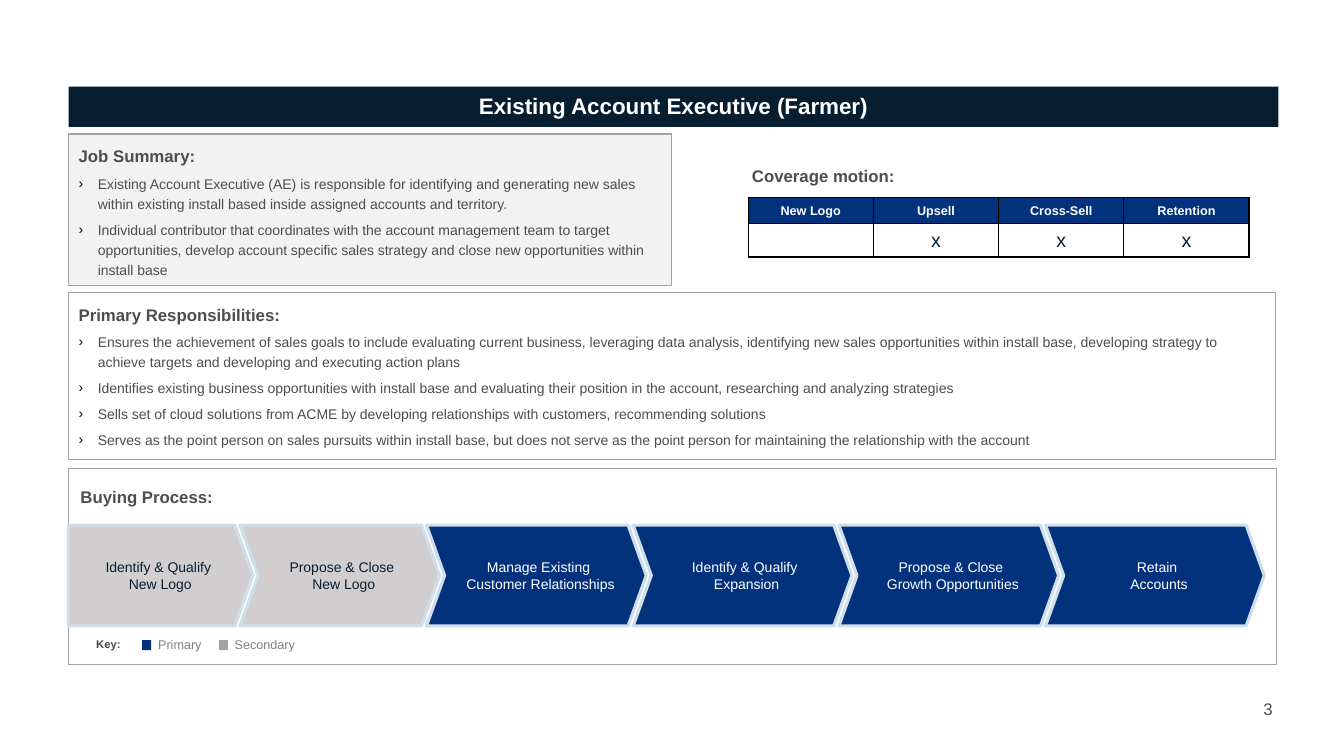
from pptx import Presentation
from pptx.dml.color import RGBColor
from pptx.enum.shapes import MSO_SHAPE as Preset
from pptx.enum.text import MSO_ANCHOR as Anchor, MSO_AUTO_SIZE as AutoSize, PP_ALIGN as Align
from pptx.oxml import parse_xml
from pptx.oxml.ns import nsdecls
from pptx.util import Inches, Pt

NAVY = RGBColor(0x07, 0x1E, 0x31)
BLUE = RGBColor(0x03, 0x32, 0x7C)
PALE_BLUE = RGBColor(0xCE, 0xDF, 0xEB)
SILVER = RGBColor(0xD0, 0xCE, 0xCE)
GRAY = RGBColor(0x9F, 0xA4, 0x9F)
LIGHT = RGBColor(0xF2, 0xF2, 0xF2)
TEXT = RGBColor(0x4D, 0x4D, 0x4D)
KEY_TEXT = RGBColor(0x7F, 0x7F, 0x7F)
KEY_TITLE = RGBColor(0x4C, 0x48, 0x46)
WHITE = RGBColor(0xFF, 0xFF, 0xFF)

JOB_SUMMARY = [
    "Existing Account Executive (AE) is responsible for identifying and generating new sales "
    "within existing install based inside assigned accounts and territory.",
    "Individual contributor that coordinates with the account management team to target "
    "opportunities, develop account specific sales strategy and close new opportunities "
    "within install base",
]
RESPONSIBILITIES = [
    "Ensures the achievement of sales goals to include evaluating current business, leveraging "
    "data analysis, identifying new sales opportunities within install base, developing "
    "strategy to achieve targets and developing and executing action plans",
    "Identifies existing business opportunities with install base and evaluating their "
    "position in the account, researching and analyzing strategies",
    "Sells set of cloud solutions from ACME by developing relationships with customers, "
    "recommending solutions",
    "Serves as the point person on sales pursuits within install base, but does not serve as "
    "the point person for maintaining the relationship with the account",
]
COVERAGE = {"New Logo": "", "Upsell": "x", "Cross-Sell": "x", "Retention": "x"}
STAGES = [
    ("Identify & Qualify \vNew Logo", 1.83, False),
    ("Propose & Close \vNew Logo", 1.98, False),
    ("Manage Existing \vCustomer Relationships", 2.18, True),
    ("Identify & Qualify \vExpansion", 2.17, True),
    ("Propose & Close \vGrowth Opportunities", 2.18, True),
    ("Retain \vAccounts", 2.17, True),
]
STAGE_OVERLAP = 0.13


def write(paragraph, text, size=10, color=TEXT, bold=False, align=Align.LEFT):
    """Put formatted text in a paragraph."""
    paragraph.text = text
    paragraph.alignment = align
    for run in paragraph.runs:
        run.font.name = "Arial"
        run.font.size = Pt(size)
        run.font.bold = bold
        run.font.color.rgb = color


def set_insets(frame, left=0.1, top=0.05, right=0.1, bottom=0.05):
    """Set the inner margins of a text frame or table cell in inches."""
    frame.margin_left, frame.margin_top = Inches(left), Inches(top)
    frame.margin_right, frame.margin_bottom = Inches(right), Inches(bottom)


def place(shape, left, top, width, height):
    """Move a placeholder to a box given in inches."""
    shape.left, shape.top = Inches(left), Inches(top)
    shape.width, shape.height = Inches(width), Inches(height)


def paint(shape, fill=None, line=None, line_width=1):
    """Set the fill and outline of a shape."""
    if fill is None:
        shape.fill.background()
    else:
        shape.fill.solid()
        shape.fill.fore_color.rgb = fill
    if line is None:
        shape.line.fill.background()
    else:
        shape.line.color.rgb = line
        shape.line.width = Pt(line_width)


def add_preset(slide, preset, left, top, width, height, **colors):
    """Add a shadowless preset shape."""
    shape = slide.shapes.add_shape(
        preset, Inches(left), Inches(top), Inches(width), Inches(height))
    shape.shadow.inherit = False
    paint(shape, **colors)
    return shape


def add_label(slide, text, left, top, width, height, **text_format):
    """Add a wrapped one-line text box."""
    box = slide.shapes.add_textbox(Inches(left), Inches(top), Inches(width), Inches(height))
    box.text_frame.word_wrap = True
    set_insets(box.text_frame)
    write(box.text_frame.paragraphs[0], text, **text_format)
    return box


def set_bullet(paragraph, mark=None):
    """Give a paragraph a hanging black bullet, or none."""
    properties = paragraph._p.get_or_add_pPr()
    indent = Inches(0.19) if mark else 0
    properties.set("marL", str(indent))
    properties.set("indent", str(-indent))
    if mark:
        elements = ['<a:buClr {}><a:srgbClr val="000000"/></a:buClr>',
                    '<a:buFont {} typeface="Arial"/>',
                    '<a:buChar {} char="' + mark + '"/>']
    else:
        elements = ["<a:buNone {}/>"]
    for element in elements:
        properties.append(parse_xml(element.format(nsdecls("a"))))


def fill_title(title, text, left, top, width, height):
    """Format the title placeholder as a dark banner."""
    place(title, left, top, width, height)
    paint(title, fill=NAVY)
    frame = title.text_frame
    frame.auto_size = AutoSize.NONE
    frame.vertical_anchor = Anchor.MIDDLE
    set_insets(frame, 0, 0, 0, 0)
    write(frame.paragraphs[0], text, size=16, color=WHITE, bold=True, align=Align.CENTER)
    frame.paragraphs[0].line_spacing = 0.9


def fill_panel(body, heading, points, fill, left, top, width, height):
    """Format a body placeholder as a framed heading with bullets."""
    place(body, left, top, width, height)
    paint(body, fill=fill, line=GRAY)
    frame = body.text_frame
    frame.auto_size = AutoSize.NONE
    frame.vertical_anchor = Anchor.TOP
    set_insets(frame, top=0.08)
    for index, text in enumerate([heading, *points]):
        paragraph = frame.add_paragraph() if index else frame.paragraphs[0]
        set_bullet(paragraph, "›" if index else None)
        write(paragraph, text, size=10 if index else 12, bold=not index)
        paragraph.line_spacing = 1.2
        paragraph.space_before = Pt(2 if index else 0)
        paragraph.space_after = Pt(2)


def format_cell(cell, text, fill=None, **text_format):
    """Write a centred table cell with black borders."""
    if fill is None:
        cell.fill.background()
    else:
        cell.fill.solid()
        cell.fill.fore_color.rgb = fill
    cell.vertical_anchor = Anchor.MIDDLE
    set_insets(cell, top=0, bottom=0)
    write(cell.text_frame.paragraphs[0], text, align=Align.CENTER, **text_format)
    properties = cell._tc.get_or_add_tcPr()
    for index, side in enumerate(("lnL", "lnR", "lnT", "lnB")):
        properties.insert(index, parse_xml(
            f'<a:{side} {nsdecls("a")} w="12700"><a:solidFill>'
            f'<a:srgbClr val="000000"/></a:solidFill></a:{side}>'))


def add_coverage(slide, left, top, width, height):
    """Add the coverage heading and its table."""
    add_label(slide, "Coverage motion:", left, top, 2.34, 0.3, size=12, bold=True)
    table = slide.shapes.add_table(
        2, len(COVERAGE), Inches(left + 0.06), Inches(top + 0.36),
        Inches(width - 0.06), Inches(height - 0.36)).table
    table.horz_banding = False
    table.rows[0].height, table.rows[1].height = Inches(0.26), Inches(0.33)
    for column, (motion, mark) in enumerate(COVERAGE.items()):
        format_cell(table.cell(0, column), motion, fill=BLUE, size=9, color=WHITE, bold=True)
        format_cell(table.cell(1, column), mark, size=14, color=NAVY)


def add_stages(slide, left, top, height):
    """Add the overlapping arrows of the buying process."""
    for index, (text, width, primary) in enumerate(STAGES):
        stage = add_preset(slide, Preset.CHEVRON if index else Preset.PENTAGON,
                           left, top, width, height, fill=BLUE if primary else SILVER,
                           line=PALE_BLUE, line_width=2.25)
        stage.adjustments[0] = 0.18
        stage.text_frame.word_wrap = True
        stage.text_frame.vertical_anchor = Anchor.MIDDLE
        set_insets(stage.text_frame, 0.08, 0.12, 0, 0.12)
        write(stage.text_frame.paragraphs[0], text,
              color=WHITE if primary else NAVY, align=Align.CENTER)
        left += width - STAGE_OVERLAP


def add_buying_process(slide, left, top, width, height):
    """Add the framed buying process with its colour key."""
    add_preset(slide, Preset.RECTANGLE, left, top, width, height, line=GRAY)
    add_label(slide, "Buying Process:", left + 0.02, top + 0.13, 3.36, 0.3, size=12, bold=True)
    add_stages(slide, left, top + 0.56, 1)
    key_top = top + 1.62
    add_label(slide, "Key:", left, key_top, 0.79, 0.24,
              size=8, color=KEY_TITLE, bold=True, align=Align.CENTER)
    for offset, name, color in ((0.73, "Primary", BLUE), (1.49, "Secondary", GRAY)):
        add_preset(slide, Preset.RECTANGLE, left + offset, key_top + 0.08, 0.09, 0.1, fill=color)
        add_label(slide, name, left + offset + 0.06, key_top, 0.96, 0.25, size=9, color=KEY_TEXT)


def main():
    """Build and save the role profile slide."""
    presentation = Presentation()
    presentation.slide_width, presentation.slide_height = Inches(13.33), Inches(7.5)
    slide = presentation.slides.add_slide(presentation.slide_layouts[3])
    fill_title(slide.shapes.title, "Existing Account Executive (Farmer)", 0.68, 0.86, 12, 0.4)
    fill_panel(slide.placeholders[1], "Job Summary:", JOB_SUMMARY, LIGHT, 0.68, 1.33, 5.98, 1.5)
    fill_panel(slide.placeholders[2], "Primary Responsibilities:", RESPONSIBILITIES, WHITE,
               0.68, 2.9, 11.97, 1.66)
    add_coverage(slide, 7.36, 1.6, 5.03, 0.95)
    add_buying_process(slide, 0.68, 4.65, 11.98, 1.94)
    number = add_label(slide, "3", 12.53, 6.93, 0.34, 0.2, size=12)
    set_insets(number.text_frame, 0, 0, 0, 0)
    number.text_frame.vertical_anchor = Anchor.MIDDLE
    presentation.save("out.pptx")


if __name__ == "__main__":
    main()
